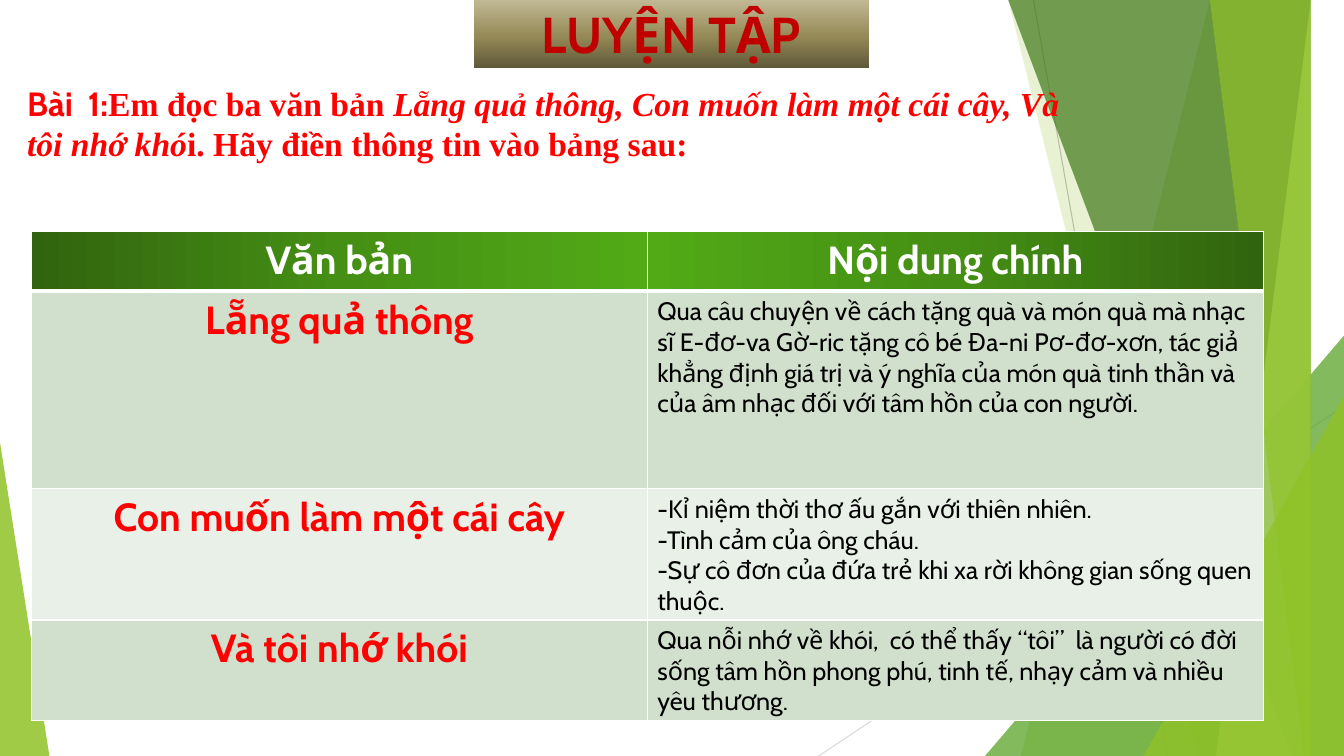
from lxml.etree import SubElement
from pptx import Presentation
from pptx.dml.color import RGBColor as RGB
from pptx.enum.shapes import MSO_CONNECTOR as CONN, MSO_SHAPE as SHAPE
from pptx.enum.text import MSO_ANCHOR as ANCHOR, MSO_AUTO_SIZE as AUTO, PP_ALIGN as ALIGN
from pptx.oxml.ns import qn
from pptx.util import Inches, Pt

COLORS = {
    "lime": "90C226", "green": "54A021", "forest": "3F7819", "pale": "C0E474",
    "grey": "BFBFBF", "silver": "D9D9D9", "white": "FFFFFF", "black": "000000",
    "red": "FF0000", "crimson": "C00000", "band": "D1DFCD", "light": "E9F0E8",
}
BANNER_STOPS = [(0, "615A39"), (48, "968B58"), (100, "C1B995")]
HEADER_STOPS = [(0, "31640E"), (50, "458F14"), (100, "52AA17")]
W, H = 13.33, 7.5


def add_gradient(parent, stops, angle):
    grad = SubElement(parent, qn("a:gradFill"), rotWithShape="1")
    gs_list = SubElement(grad, qn("a:gsLst"))
    for pos, color in stops:
        gs = SubElement(gs_list, qn("a:gs"), pos=str(pos * 1000))
        SubElement(gs, qn("a:srgbClr"), val=color)
    SubElement(grad, qn("a:lin"), ang=str(angle * 60000), scaled="0")


def style_run(r, size, color, bold=True, italic=False, font="Cabin"):
    r.font.name, r.font.size = font, Pt(size)
    r.font.bold, r.font.italic = bold, italic
    r.font.color.rgb = RGB.from_string(COLORS[color])


prs = Presentation()
prs.slide_width, prs.slide_height = Inches(W), Inches(H)
slide = prs.slides.add_slide(prs.slide_layouts[5])
shapes = slide.shapes

# Thin background lines
for x1, y1, x2, y2, color in [(10.25, 0, 11.58, H, "grey"), (W, 4.03, 8.12, H, "silver")]:
    line = shapes.add_connector(CONN.STRAIGHT, Inches(x1), Inches(y1), Inches(x2), Inches(y2))
    line.line.color.rgb = RGB.from_string(COLORS[color])
    line.line.width = Pt(0.75)
    SubElement(line._element.spPr, qn("a:effectLst"))

# Translucent facets: bands (top x, bottom x) reach the right edge,
# triangles (left, top, width, apex) stand on the bottom edge
facets = [
    ((12.28, 10.04), "lime", 30),
    ((10.5, 11.83), "lime", 20),
    ((9.77, 3.33, 3.56, 1), "green", 72),
    ((10.21, 12.91), "forest", 70),
    ((13.03, 11.92), "pale", 70),
    ((11.96, 13.18), "lime", 65),
    ((11.34, 3.93, 1.99, 1), "lime", 80),
    ((0, 4.39, 0.49, 0), "lime", 85),
]
for geometry, color, opacity in facets:
    if len(geometry) == 2:
        top_x, bottom_x = geometry
        outline = shapes.build_freeform(top_x, 0, scale=Inches(1))
        outline.add_line_segments([(W, 0), (W, H), (bottom_x, H)], close=True)
        s = outline.convert_to_shape()
    else:
        left, top, width, apex = geometry
        s = shapes.add_shape(SHAPE.ISOSCELES_TRIANGLE, Inches(left), Inches(top),
                             Inches(width), Inches(H - top))
        s.adjustments[0] = apex
    s.shadow.inherit = False
    s.line.fill.background()
    s.fill.solid()
    s.fill.fore_color.rgb = RGB.from_string(COLORS[color])
    SubElement(s._element.spPr.find(".//" + qn("a:srgbClr")), qn("a:alpha"),
               val=str(opacity * 1000))

# Title banner, brought in front of the facets
title = shapes.title
title.left, title.top, title.width, title.height = Inches(4.7), 0, Inches(3.92), Inches(0.67)
geom = SubElement(title._element.spPr, qn("a:prstGeom"), prst="roundRect")
SubElement(geom, qn("a:avLst"))
add_gradient(title._element.spPr, BANNER_STOPS, 270)
tf = title.text_frame
tf.text = "LUYỆN TẬP"
tf.auto_size, tf.vertical_anchor = AUTO.NONE, ANCHOR.MIDDLE
tf.paragraphs[0].alignment = ALIGN.CENTER
style_run(tf.paragraphs[0].runs[0], 36, "crimson")
shapes._spTree.append(title._element)

# Exercise prompt
prompt = shapes.add_textbox(Inches(0.17), Inches(0.77), Inches(10.58), Inches(1.21))
tf = prompt.text_frame
tf.word_wrap = True
for text, font, italic in [
    ("Bài  1:", "Cabin", False),
    ("Em đọc ba văn bản ", "Times New Roman", False),
    ("Lẵng quả thông, Con muốn làm một cái cây, Và tôi nhớ khó", "Times New Roman", True),
    ("i. Hãy điền thông tin vào bảng sau:", "Times New Roman", False),
]:
    r = tf.paragraphs[0].add_run()
    r.text = text
    style_run(r, 24, "red", italic=italic, font=font)

# Table of texts and their main content
rows = [
    ("Văn bản", "Nội dung chính"),
    ("Lẵng quả thông",
     "Qua câu chuyện về cách tặng quà và món quà mà nhạc sĩ E-đơ-va Gờ-ric tặng cô bé "
     "Đa-ni Pơ-đơ-xơn, tác giả khẳng định giá trị và ý nghĩa của món quà tinh thần và "
     "của âm nhạc đối với tâm hồn của con người."),
    ("Con muốn làm một cái cây",
     "-Kỉ niệm thời thơ ấu gắn với thiên nhiên.\n"
     "-Tình cảm của ông cháu.\n"
     "-Sự cô đơn của đứa trẻ khi xa rời không gian sống quen thuộc."),
    ("Và tôi nhớ khói",
     "Qua nỗi nhớ về khói,  có thể thấy “tôi”  là người có đời sống tâm hồn phong phú, "
     "tinh tế, nhạy cảm và nhiều yêu thương."),
]
heights = [0.59, 1.96, 1.3, 1]
table = shapes.add_table(len(rows), 2, Inches(0.31), Inches(2.3),
                         Inches(12.22), Inches(sum(heights))).table
for i, (row, height) in enumerate(zip(rows, heights)):
    table.rows[i].height = Inches(height)
    for j, text in enumerate(row):
        cell = table.cell(i, j)
        cell.text_frame.text = text
        for p in cell.text_frame.paragraphs:
            if i == 0 or j == 0:
                p.alignment = ALIGN.CENTER
                style_run(p.runs[0], 28, "red" if i else "white")
            else:
                style_run(p.runs[0], 18, "black", bold=False)

        # White borders, thicker under the header
        tc_pr = cell._tc.get_or_add_tcPr()
        for side in "LRTB":
            thick = (i, side) in [(0, "B"), (1, "T")]
            border = SubElement(tc_pr, qn("a:ln" + side), w=str(Pt(3 if thick else 1)))
            SubElement(SubElement(border, qn("a:solidFill")), qn("a:srgbClr"),
                       val=COLORS["white"])
        if i == 0:
            add_gradient(tc_pr, HEADER_STOPS, 180 * j)
        else:
            cell.fill.solid()
            cell.fill.fore_color.rgb = RGB.from_string(COLORS["band" if i % 2 else "light"])

prs.save("out.pptx")
